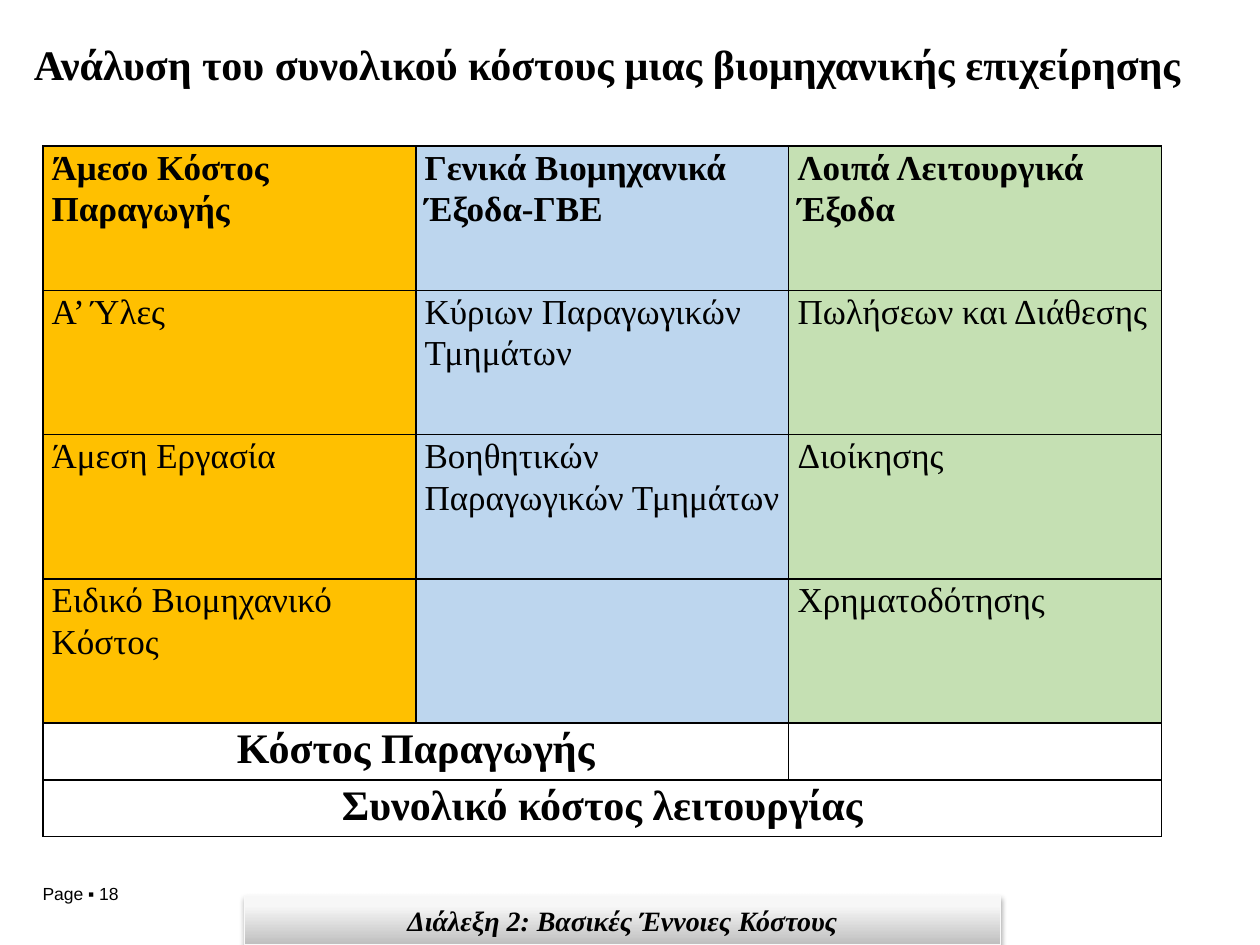
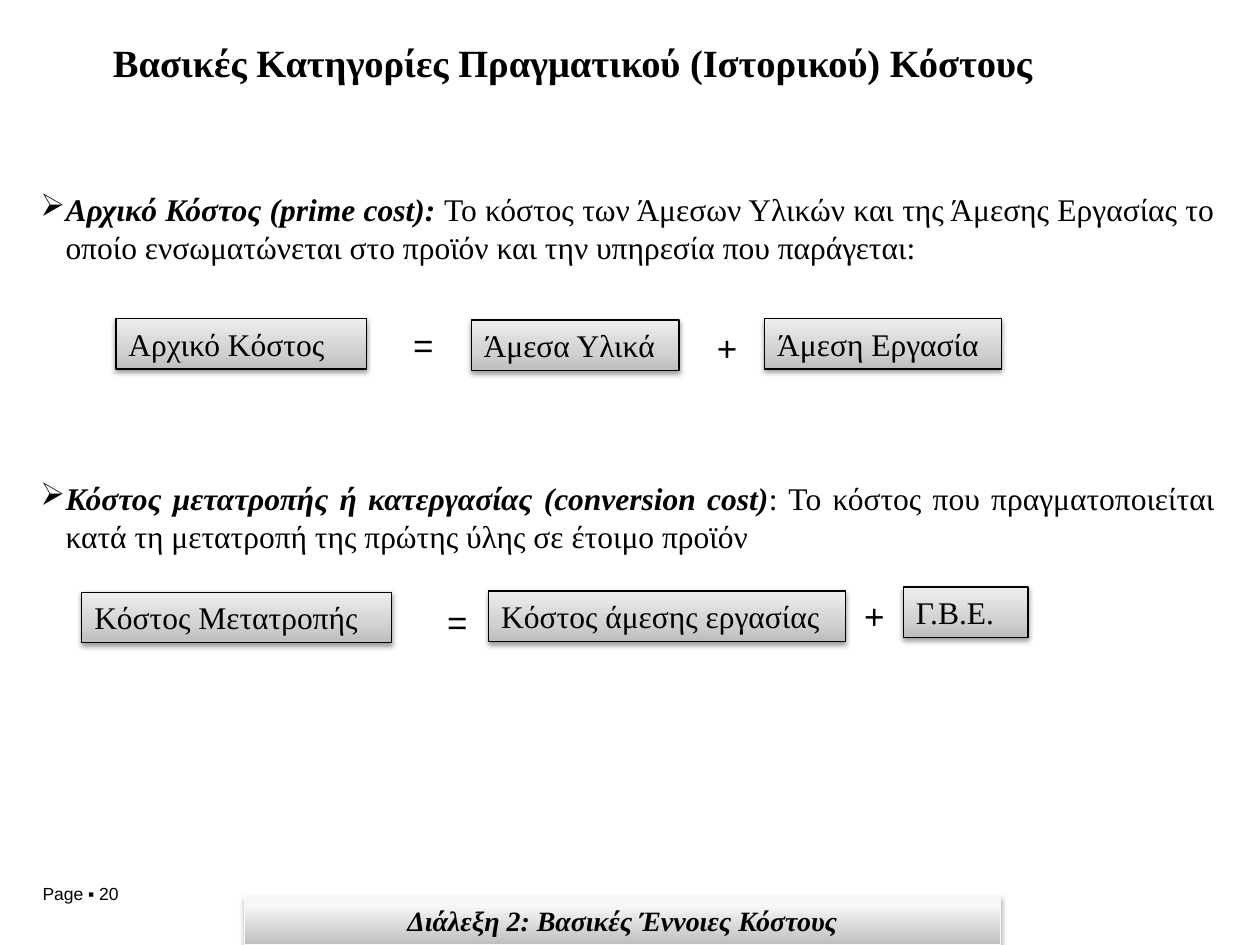
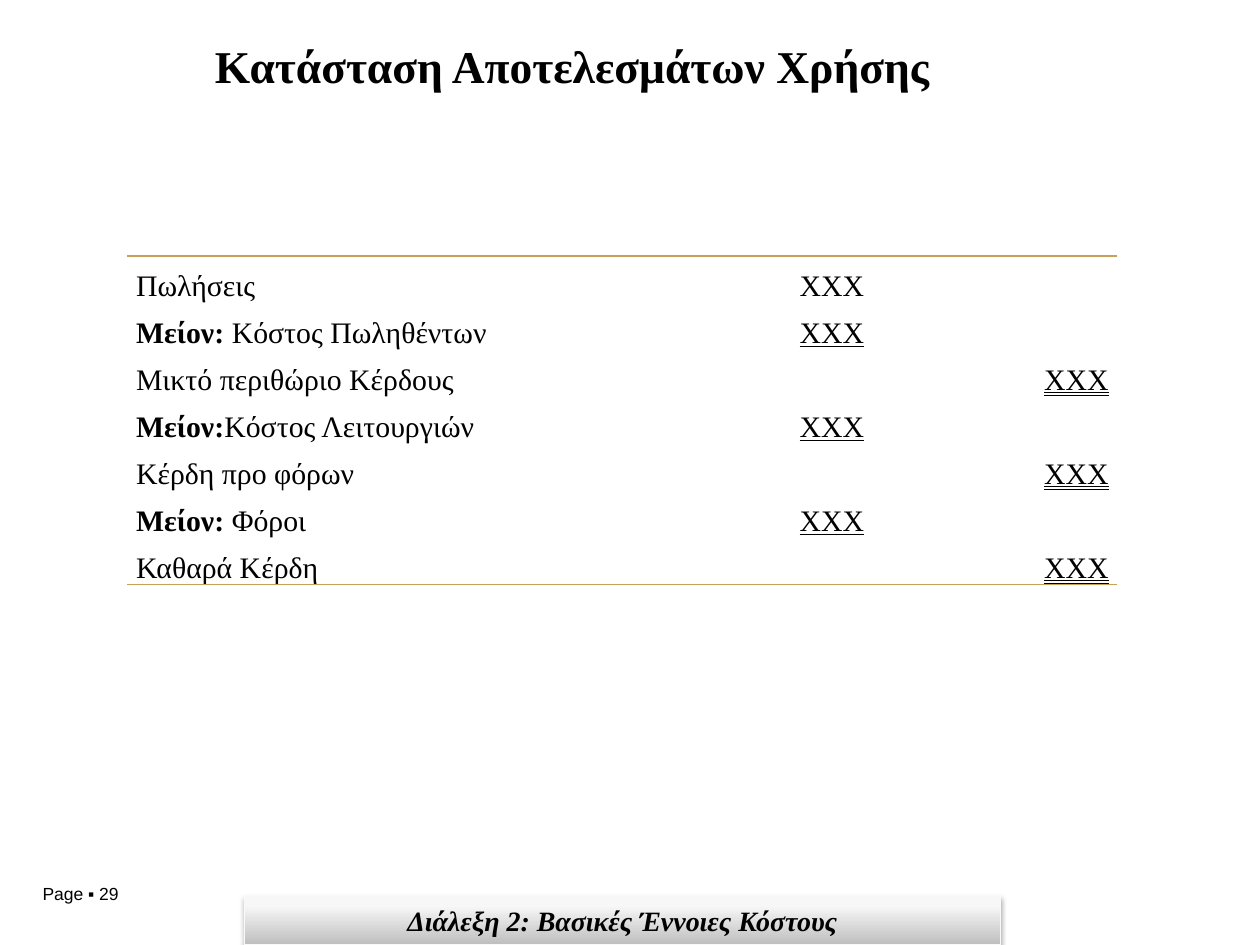
from lxml import etree
from pptx import Presentation
from pptx.dml.color import RGBColor
from pptx.enum import shapes, text
from pptx.oxml import ns
from pptx.util import Inches, Pt

BLACK = RGBColor(0, 0, 0)
PALE = RGBColor(0xF9, 0xF9, 0xF9)
GOLD = RGBColor(0xC8, 0xA0, 0x58)
AMBER = RGBColor(0xFF, 0xC0, 0x00)
BLUE = RGBColor(0xBD, 0xD6, 0xEE)
GREEN = RGBColor(0xC5, 0xE0, 0xB3)
SERIF, SANS = "Times New Roman", "Arial"
PLAIN = "{2D5ABB26-0587-4C30-8999-92F81FD0307C}"  # table style without grid
BAND = [(0, "BEBEBE"), (80, "F7F7F7"), (100, "F8F8F8")]
TILE = [(0, "BDBDBD"), (35, "D1D1D1"), (100, "EEEEEE")]
AL, UL = text.PP_ALIGN, text.MSO_UNDERLINE

# Content
LECTURE = "Διάλεξη 2: Βασικές Έννοιες Κόστους"
# title, size, left, width, page
HEADS = [
    ("Ανάλυση του συνολικού κόστους μιας βιομηχανικής επιχείρησης", 24, 0.08, 9.48, 18),
    ("Βασικές Κατηγορίες Πραγματικού (Ιστορικού) Κόστους", 22, 0.34, 8.41, 20),
    ("Κατάσταση Αποτελεσμάτων Χρήσης", 26, 0.34, 8.41, 29),
]
COSTS = [
    ("Άμεσο Κόστος Παραγωγής", "Γενικά Βιομηχανικά Έξοδα-ΓΒΕ", "Λοιπά Λειτουργικά Έξοδα"),
    ("Α’ Ύλες", "Κύριων Παραγωγικών Τμημάτων", "Πωλήσεων και Διάθεσης"),
    ("Άμεση Εργασία", "Βοηθητικών Παραγωγικών Τμημάτων", "Διοίκησης"),
    ("Ειδικό Βιομηχανικό Κόστος", "", "Χρηματοδότησης"),
]
SUMS = [("Κόστος Παραγωγής", 2), ("Συνολικό κόστος λειτουργίας", 3)]
TERMS = [
    ("Αρχικό Κόστος (prime cost): ",
     "Το κόστος των Άμεσων Υλικών και της Άμεσης Εργασίας το οποίο "
     "ενσωματώνεται στο προϊόν και την υπηρεσία που παράγεται:"),
    ("Κόστος μετατροπής ή κατεργασίας (conversion cost)",
     ": Το κόστος που πραγματοποιείται κατά τη μετατροπή της πρώτης ύλης σε έτοιμο προϊόν"),
]
# text, left, top, width
TILES = [
    ("Αρχικό Κόστος", 0.92, 2.53, 1.99),
    ("Άμεσα Υλικά", 3.74, 2.54, 1.65),
    ("Άμεση Εργασία", 6.07, 2.53, 1.88),
    ("Κόστος Μετατροπής", 0.65, 4.7, 2.46),
    ("Κόστος άμεσης εργασίας", 3.88, 4.69, 2.83),
    ("Γ.Β.Ε.", 7.17, 4.66, 0.99),
]
SIGNS = [("=", 3.18, 2.52, 0.21), ("+", 5.59, 2.54, 0.35),
         ("=", 3.45, 4.72, 0.21), ("+", 6.76, 4.67, 0.35)]
# bold lead, label, columns spanned, amount column, underline
RESULT = [
    ("", "Πωλήσεις", 1, 4, None),
    ("Μείον: ", "Κόστος Πωληθέντων", 3, 4, UL.SINGLE_LINE),
    ("", "Μικτό περιθώριο Κέρδους", 3, 5, UL.DOUBLE_LINE),
    ("Μείον:", "Κόστος Λειτουργιών", 4, 4, UL.SINGLE_LINE),
    ("", "Κέρδη προ φόρων", 4, 5, UL.DOUBLE_LINE),
    ("Μείον:", " Φόροι", 4, 4, UL.SINGLE_LINE),
    ("", "Καθαρά Κέρδη", 4, 5, UL.DOUBLE_LINE),
]


def node(up, tag, **attrs):
    return etree.SubElement(up, ns.qn("a:" + tag), {k: str(v) for k, v in attrs.items()})


def run(par, words, size, bold=False, italic=False, face=SERIF, line=None):
    r = par.add_run()
    r.text = words
    font = r.font
    font.name, font.size, font.bold, font.italic = face, Pt(size), bold, italic
    font.color.rgb = BLACK
    if line is not None:
        font.underline = line


def setup(frame, side=0.1, edge=0.05, anchor=text.MSO_ANCHOR.TOP):
    frame.word_wrap = True
    frame.margin_left = frame.margin_right = Inches(side)
    frame.margin_top = frame.margin_bottom = Inches(edge)
    frame.vertical_anchor = anchor
    return frame.paragraphs[0]


def label(slide, box, side=0.1, edge=0.05):
    shape = slide.shapes.add_textbox(*map(Inches, box))
    return setup(shape.text_frame, side, edge), shape.text_frame


def panel(slide, box, stops, edge, alpha, drop):
    """Rectangle with an upward gradient and a soft shadow below."""
    shape = slide.shapes.add_shape(shapes.MSO_SHAPE.RECTANGLE, *map(Inches, box))
    shape.fill.gradient()
    shape.fill.gradient_angle = 90
    tree = shape.element.spPr
    grad = tree.find(".//" + ns.qn("a:gsLst"))
    for old in list(grad):
        grad.remove(old)
    for pos, tint in stops:
        node(node(grad, "gs", pos=pos * 1000), "srgbClr", val=tint)
    shape.line.color.rgb = edge
    shape.line.width = Pt(0.75)
    shape.shadow.inherit = False
    cast = node(tree.find(ns.qn("a:effectLst")), "outerShdw", blurRad=Pt(3.1),
                dist=Pt(drop), dir=5400000, rotWithShape=0)
    node(node(cast, "srgbClr", val="000000"), "alpha", val=alpha * 1000)
    return shape.text_frame


def start(deck, head):
    """New slide with title, page number and lecture band."""
    words, size, left, width, page = head
    slide = deck.slides.add_slide(deck.slide_layouts[6])
    par, _ = label(slide, (0.24, 6.96, 1.47, 0.27))
    run(par, f"Page ▪ {page}", 10, face=SANS)
    par, _ = label(slide, (left, 0.3, width, 0.71), side=0)
    par.alignment, par.line_spacing = AL.CENTER, 0.9
    run(par, words, size, bold=True)
    frame = panel(slide, (1.94, 7.11, 6, 0.39), BAND, PALE, 35, 1.8)
    par = setup(frame, 0, 0, text.MSO_ANCHOR.MIDDLE)
    par.alignment = AL.CENTER
    run(par, LECTURE, 16, bold=True, italic=True)
    return slide


def grid(slide, left, top, cols, rows):
    box = (left, top, sum(cols), sum(rows))
    frame = slide.shapes.add_table(len(rows), len(cols), *map(Inches, box))
    frame.element.find(".//" + ns.qn("a:tableStyleId")).text = PLAIN
    table = frame.table
    table.first_row = table.horz_banding = False
    for col, width in zip(table.columns, cols):
        col.width = Inches(width)
    for row, height in zip(table.rows, rows):
        row.height = Inches(height)
    return table


def dress(cell, sides, tint, fill=None):
    """Borders on the given sides, then fill and margins."""
    props = cell._tc.get_or_add_tcPr()
    for side in sides:
        line = node(props, "ln" + side, w=Pt(1))
        node(node(line, "solidFill"), "srgbClr", val=tint)
    if fill is None:
        cell.fill.background()
    else:
        cell.fill.solid()
        cell.fill.fore_color.rgb = fill
    cell.margin_left = cell.margin_right = Inches(0.07)
    cell.margin_top = cell.margin_bottom = 0


def write(cell, align, space):
    par = cell.text_frame.paragraphs[0]
    par.alignment, par.line_spacing = align, space
    return par


def costs(slide):
    tall, low = 1.145, 0.45
    table = grid(slide, 0.34, 1.16, [2.96] * 3, [tall] * len(COSTS) + [low] * len(SUMS))
    for i, row in enumerate(COSTS):
        for j, (words, fill) in enumerate(zip(row, (AMBER, BLUE, GREEN))):
            dress(table.cell(i, j), "LRTB", BLACK, fill)
            if words:
                run(write(table.cell(i, j), AL.LEFT, 1.07), words, 20, bold=i == 0)
    for i, (words, span) in enumerate(SUMS, len(COSTS)):
        for j in range(3):
            dress(table.cell(i, j), "LRTB", BLACK)
        table.cell(i, 0).merge(table.cell(i, span - 1))
        run(write(table.cell(i, 0), AL.CENTER, 1.07), words, 24, bold=True)


def terms(slide):
    par, frame = label(slide, (0.32, 1.51, 9.32, 4.46), 0, 0)
    for i, (name, sense) in enumerate(TERMS):
        if i:
            par = frame.add_paragraph()
            par.space_before = Pt(122)
        par.alignment = AL.JUSTIFY
        props = par._p.get_or_add_pPr()
        props.set("marL", str(Inches(0.2)))
        props.set("indent", str(-Inches(0.2)))
        node(props, "buChar", char="➢")
        run(par, name, 18, bold=True, italic=True)
        run(par, sense, 18)
    # Equations
    for words, left, top, width in TILES:
        par = setup(panel(slide, (left, top, width, 0.4), TILE, BLACK, 38, 1.6))
        par.alignment = AL.LEFT
        run(par, words, 18)
    for sign, left, top, width in SIGNS:
        par, _ = label(slide, (left, top, width, 0.44))
        run(par, sign, 20, face=SANS)


def result(slide):
    count = len(RESULT)
    cols = [1.64, 1.64, 0.27, 0.43, 1.94, 1.94]
    table = grid(slide, 1.01, 2.03, cols, [2.61 / count] * count)
    for i, (lead, words, span, spot, line) in enumerate(RESULT):
        sides = {0: "T", count - 1: "B"}.get(i, "")
        for j in range(len(cols)):
            dress(table.cell(i, j), sides, GOLD)
            table.cell(i, j).vertical_anchor = text.MSO_ANCHOR.BOTTOM
        if span > 1:
            table.cell(i, 0).merge(table.cell(i, span - 1))
        par = write(table.cell(i, 0), AL.JUSTIFY, 1.15)
        if lead:
            run(par, lead, 17, bold=True)
        run(par, words, 17)
        run(write(table.cell(i, spot), AL.RIGHT, 1.15), "ΧΧΧ", 17, line=line)


def main():
    deck = Presentation()
    deck.slide_width, deck.slide_height = Inches(10), Inches(7.5)
    for head, fill in zip(HEADS, (costs, terms, result)):
        fill(start(deck, head))
    deck.save("out.pptx")


if __name__ == "__main__":
    main()
